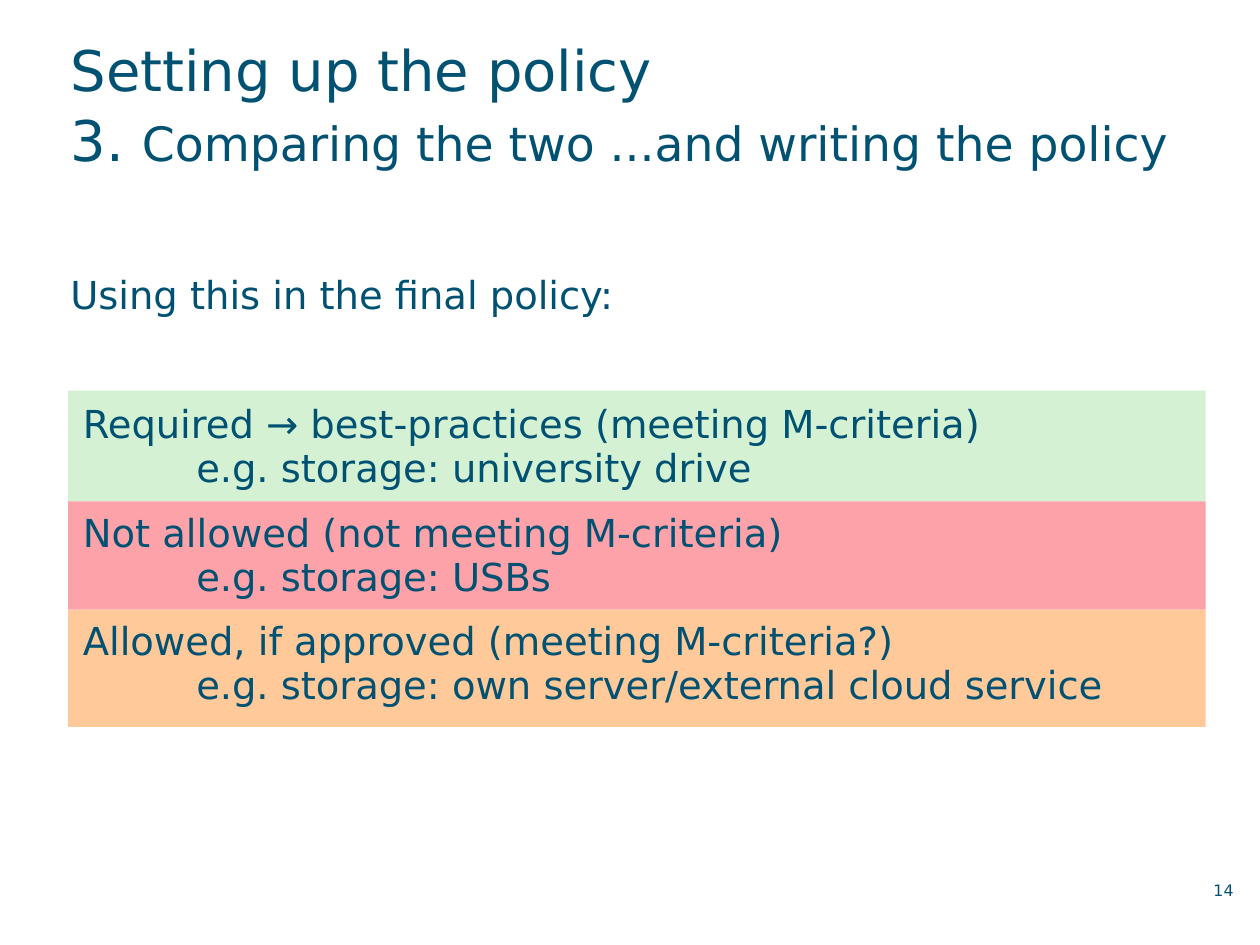
from dataclasses import dataclass

from pptx import Presentation
from pptx.dml.color import RGBColor
from pptx.enum.shapes import MSO_SHAPE
from pptx.enum.text import MSO_ANCHOR, MSO_AUTO_SIZE, PP_ALIGN
from pptx.util import Inches, Pt


@dataclass(frozen=True)
class Theme:
    font: str = "DejaVu Sans"
    ink: str = "005172"
    required: str = "D4F2D3"
    forbidden: str = "FCA2A8"
    conditional: str = "FFC999"
    title: int = 32
    subtitle: int = 27
    body: int = 22
    page_number: int = 9


THEME = Theme()

POLICY_RULES = [
    ("Required → best-practices (meeting M-criteria)",
     "e.g. storage: university drive"),
    ("Not allowed (not meeting M-criteria)",
     "e.g. storage: USBs"),
    ("Allowed, if approved (meeting M-criteria?)",
     "e.g. storage: own server/external cloud service"),
]


def write(paragraph, text, size, line=None, before=0, indent=0,
          align=PP_ALIGN.LEFT):
    """Append a run to the paragraph and set the paragraph's format."""
    run = paragraph.add_run()
    run.text = text
    run.font.name = THEME.font
    run.font.size = Pt(size)
    run.font.color.rgb = RGBColor.from_string(THEME.ink)
    paragraph.alignment = align
    paragraph.space_before = Pt(before)
    if line:
        paragraph.line_spacing = Pt(line)
    if indent:
        properties = paragraph._p.get_or_add_pPr()
        properties.set("marL", str(Inches(indent)))
        properties.set("indent", "0")


def set_frame(frame, left=0.1, top=0.05, right=0.1, bottom=0.05,
              anchor=MSO_ANCHOR.TOP):
    frame.word_wrap = True
    frame.auto_size = MSO_AUTO_SIZE.NONE
    frame.vertical_anchor = anchor
    frame.margin_left, frame.margin_top = Inches(left), Inches(top)
    frame.margin_right, frame.margin_bottom = Inches(right), Inches(bottom)


def place_title(slide, left, top, width, height):
    title = slide.shapes.title
    title.left, title.top = Inches(left), Inches(top)
    title.width, title.height = Inches(width), Inches(height)
    set_frame(title.text_frame, left=0.02, top=0, bottom=0.35,
              anchor=MSO_ANCHOR.MIDDLE)
    heading = title.text_frame.paragraphs[0]
    write(heading, "Setting up the policy", THEME.title, line=40)
    heading.add_line_break()
    write(heading, "3. ", THEME.title, line=40)
    write(heading, "Comparing the two ...and writing the policy",
          THEME.subtitle, line=40)


def add_bands(slide, left, top, width, heights):
    """Stack one coloured band behind each policy rule."""
    colors = (THEME.required, THEME.forbidden, THEME.conditional)
    for color, height in zip(colors, heights):
        band = slide.shapes.add_shape(
            MSO_SHAPE.RECTANGLE, Inches(left), Inches(top),
            Inches(width), Inches(height))
        band.shadow.inherit = False
        band.fill.solid()
        band.fill.fore_color.rgb = RGBColor.from_string(color)
        band.line.fill.background()
        top += height


def add_policy_text(slide, left, top, width, height):
    box = slide.shapes.add_textbox(
        Inches(left), Inches(top), Inches(width), Inches(height))
    frame = box.text_frame
    set_frame(frame)
    write(frame.paragraphs[0], "Using this in the final policy:",
          THEME.body, line=25)
    for index, (rule, example) in enumerate(POLICY_RULES):
        write(frame.add_paragraph(), rule, THEME.body, line=25,
              before=12 if index else 49, indent=0.1)
        write(frame.add_paragraph(), example, THEME.body, line=25, indent=1)


def add_page_number(slide, left, top, width, height):
    box = slide.shapes.add_textbox(
        Inches(left), Inches(top), Inches(width), Inches(height))
    set_frame(box.text_frame, top=0, right=0.04, bottom=0)
    write(box.text_frame.paragraphs[0], "14", THEME.page_number, line=12,
          align=PP_ALIGN.RIGHT)


def main():
    deck = Presentation()
    deck.slide_width, deck.slide_height = Inches(10), Inches(7.5)
    slide = deck.slides.add_slide(deck.slide_layouts[5])
    place_title(slide, 0.54, 0.25, 9.23, 1.48)
    add_bands(slide, 0.54, 3.1, 9.03, heights=(0.88, 0.86, 0.93))
    add_policy_text(slide, 0.46, 2.12, 8.97, 4.36)
    add_page_number(slide, 9.32, 6.97, 0.51, 0.18)
    deck.save("out.pptx")


if __name__ == "__main__":
    main()
